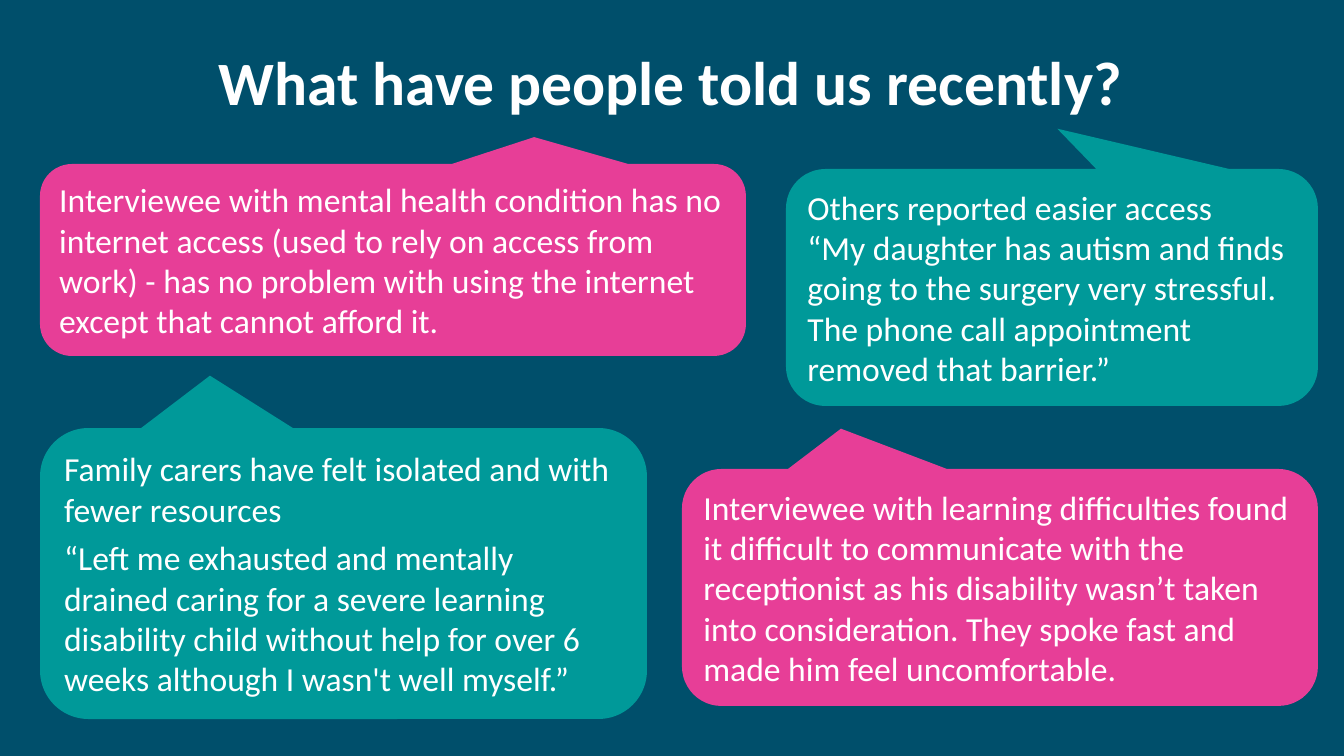
import pptx
import pptx.dml.color
import pptx.enum.shapes
import pptx.enum.text
import pptx.util

EMU_PER_PX = 914400 / 100.8
COLOURS = {"navy": "004F6B", "pink": "E73E97", "teal": "009999", "white": "FFFFFF"}

# left, top, width, height in px; pointer tip from the centre as a share of the size
CALLOUTS = [
    ((40, 164, 706, 192), (0.2, -0.64), "pink", [
        "Interviewee with mental health condition has no internet access (used to rely "
        "on access from work) - has no problem with using the internet except that "
        "cannot afford it."]),
    ((786, 169, 532, 237), (0.01, -0.67), "teal", [
        "Others reported easier access\n“My daughter has autism and finds going to the "
        "surgery very stressful. The phone call appointment removed that barrier.”"]),
    ((40, 428, 607, 291), (-0.22, -0.68), "teal", [
        "Family carers have felt isolated and with fewer resources",
        "“Left me exhausted and mentally drained caring for a severe learning disability "
        "child without help for over 6 weeks although I wasn't well myself.”"]),
    ((682, 469, 636, 237), (-0.25, -0.67), "pink", [
        "Interviewee with learning difficulties found it difficult to communicate with "
        "the receptionist as his disability wasn’t taken into consideration. They spoke "
        "fast and made him feel uncomfortable."]),
]


def px(length):
    return pptx.util.Emu(round(length * EMU_PER_PX))


def colour(name):
    return pptx.dml.color.RGBColor.from_string(COLOURS[name])


class SlideBuilder:
    """Holds the text style and the page being filled."""

    font_name = "Calibri"
    title_size = 44
    body_size = 24

    def __init__(self, page):
        self.page = page

    def background(self, fill):
        self.page.background.fill.solid()
        self.page.background.fill.fore_color.rgb = colour(fill)

    def set_text(self, para, text, size, align, bold=False):
        para.text = text
        para.alignment = align
        para.font.name = self.font_name
        para.font.size = pptx.util.Pt(size)
        para.font.bold = bold
        para.font.color.rgb = colour("white")

    def title(self, text, left, top, width, height):
        box = self.page.shapes.title
        box.left, box.top, box.width, box.height = map(px, (left, top, width, height))
        box.text_frame.auto_size = pptx.enum.text.MSO_AUTO_SIZE.NONE
        box.text_frame.vertical_anchor = pptx.enum.text.MSO_ANCHOR.MIDDLE
        self.set_text(box.text_frame.paragraphs[0], text, self.title_size,
                      pptx.enum.text.PP_ALIGN.CENTER, bold=True)

    def callout(self, place, tip, fill, texts):
        box = self.page.shapes.add_shape(
            pptx.enum.shapes.MSO_SHAPE.ROUNDED_RECTANGULAR_CALLOUT, *map(px, place))
        box.adjustments[0], box.adjustments[1] = tip
        box.shadow.inherit = False
        box.fill.solid()
        box.fill.fore_color.rgb = colour(fill)
        box.line.fill.background()
        frame = box.text_frame
        frame.word_wrap = True
        frame.vertical_anchor = pptx.enum.text.MSO_ANCHOR.MIDDLE
        for index, text in enumerate(texts):
            para = frame.add_paragraph() if index else frame.paragraphs[0]
            self.set_text(para, text, self.body_size, pptx.enum.text.PP_ALIGN.LEFT)
            para.space_after = pptx.util.Pt(6)


def main():
    deck = pptx.Presentation()
    deck.slide_width, deck.slide_height = px(1344), px(756)
    title_only = deck.slide_layouts[5]
    builder = SlideBuilder(deck.slides.add_slide(title_only))
    builder.background("navy")
    builder.title("What have people told us recently?", 25, 38, 1292, 85)
    for callout in CALLOUTS:
        builder.callout(*callout)
    deck.save("out.pptx")


if __name__ == "__main__":
    main()
